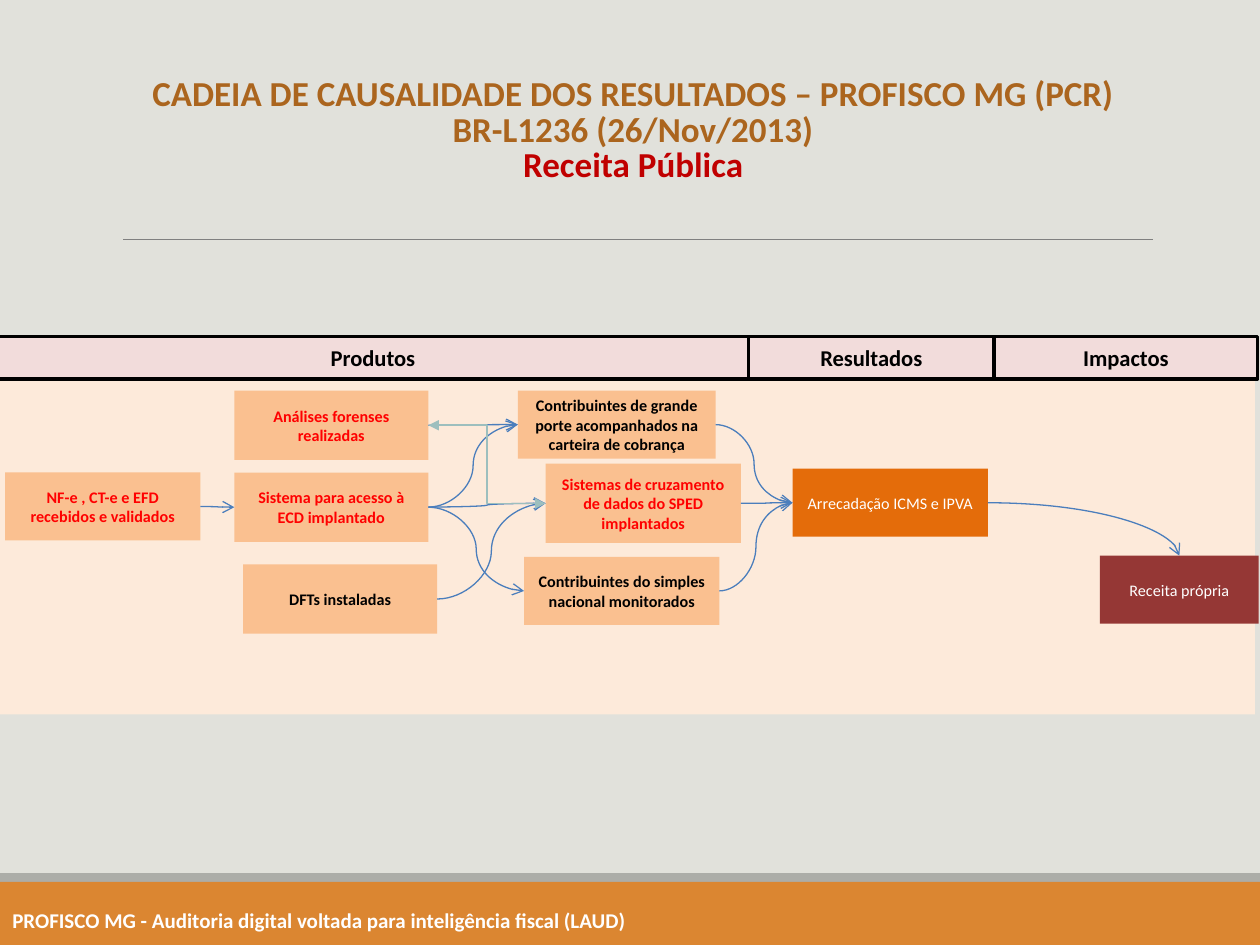
from pptx import Presentation
from pptx.dml.color import RGBColor
from pptx.enum.shapes import MSO_CONNECTOR as CONNECTOR, MSO_SHAPE as SHAPE
from pptx.enum.text import MSO_ANCHOR as ANCHOR, PP_ALIGN as ALIGN
from pptx.oxml.ns import qn
from pptx.util import Inches, Pt
from lxml.etree import SubElement

TITLE = [
    ("CADEIA DE CAUSALIDADE DOS RESULTADOS – PROFISCO MG (PCR) BR-L1236 (26/Nov/2013)", "AB651E"),
    ("Receita Pública", "C00000"),
]
FOOTER = "PROFISCO MG - Auditoria digital voltada para inteligência fiscal (LAUD)"

BANDS = [
    (0, 6.93, 10, 0.07, "ACADA8"),
    (0, 7, 10, 0.5, "DB8631"),
    (-0.03, 2.94, 9.99, 2.73, "FDEADA"),
]

HEADER_TOP, HEADER_HEIGHT = 2.67, 0.34
HEADER_LEFT = -0.02
HEADERS = [("Produtos", 5.96), ("Resultados", 1.95), ("Impactos", 2.09)]

PRODUCT, RESULT, IMPACT = "FAC090", "E46C0A", "953735"
RED, BLACK, WHITE = "FF0000", "000000", "FFFFFF"
BOXES = {
    "nfe": ("NF-e , CT-e e EFD recebidos e validados", 0.04, 3.75, 1.55, 0.54, PRODUCT, RED),
    "forenses": ("Análises forenses realizadas", 1.86, 3.1, 1.54, 0.55, PRODUCT, RED),
    "ecd": ("Sistema para acesso à ECD implantado", 1.86, 3.75, 1.54, 0.55, PRODUCT, RED),
    "dfts": ("DFTs instaladas", 1.93, 4.48, 1.54, 0.55, PRODUCT, BLACK),
    "grandes": ("Contribuintes de grande porte acompanhados na carteira de cobrança",
                4.11, 3.1, 1.57, 0.54, PRODUCT, BLACK),
    "sped": ("Sistemas de cruzamento de dados do SPED implantados",
             4.33, 3.68, 1.55, 0.63, PRODUCT, RED),
    "simples": ("Contribuintes do simples nacional monitorados",
                4.16, 4.42, 1.55, 0.54, PRODUCT, BLACK),
    "icms": ("Arrecadação ICMS e IPVA", 6.29, 3.72, 1.55, 0.54, RESULT, WHITE),
    "receita": ("Receita própria", 8.73, 4.41, 1.26, 0.54, IMPACT, WHITE),
}

FLOWS = [
    ("sped", "icms"), ("simples", "icms"), ("grandes", "icms"), ("nfe", "ecd"),
    ("ecd", "sped"), ("ecd", "grandes"), ("ecd", "simples"),
    ("forenses", "grandes"), ("dfts", "sped"),
]
TOP, LEFT, RIGHT = 0, 1, 3


def color(value):
    return RGBColor.from_string(value)


def write(paragraph, text, size=9.2, fill=BLACK, bold=True, align=ALIGN.CENTER):
    paragraph.alignment = align
    run = paragraph.add_run()
    run.text = text
    font = run.font
    font.name, font.size, font.bold = "Calibri", Pt(size), bold
    font.color.rgb = color(fill)


def add_box(left, top, width, height, fill, border=None):
    shape = slide.shapes.add_shape(
        SHAPE.RECTANGLE, Inches(left), Inches(top), Inches(width), Inches(height))
    shape.shadow.inherit = False
    shape.fill.solid()
    shape.fill.fore_color.rgb = color(fill)
    if border:
        shape.line.color.rgb = color(border)
        shape.line.width = Pt(2)
    else:
        shape.line.fill.background()
    shape.text_frame.word_wrap = True
    shape.text_frame.vertical_anchor = ANCHOR.MIDDLE
    return shape


def add_line(kind, stroke, width, points=(0, 0, 0, 0), head=None, tail=None):
    connector = slide.shapes.add_connector(kind, *map(Inches, points))
    connector.line.color.rgb = color(stroke)
    connector.line.width = Pt(width)
    line = connector.line._get_or_add_ln()
    for tag, arrow in (("a:headEnd", head), ("a:tailEnd", tail)):
        if arrow:
            SubElement(line, qn(tag), type=arrow)
    SubElement(connector._element.spPr, qn("a:effectLst"))
    return connector


def link(connector, source, target, target_side=LEFT):
    connector.begin_connect(boxes[source], RIGHT)
    connector.end_connect(boxes[target], target_side)


presentation = Presentation()
presentation.slide_width, presentation.slide_height = Inches(10), Inches(7.5)
slide = presentation.slides.add_slide(presentation.slide_layouts[5])
slide.background.fill.solid()
slide.background.fill.fore_color.rgb = color("E1E1DB")

title = slide.shapes.title
title.left, title.top, title.width, title.height = map(Inches, (0.9, 0.31, 8.25, 1.21))
title.text_frame.vertical_anchor = ANCHOR.BOTTOM
title.text_frame.word_wrap = True
heading = title.text_frame.paragraphs[0]
heading.line_spacing = 0.85
for index, (text, fill) in enumerate(TITLE):
    if index:
        heading.add_line_break()
    write(heading, text, size=20, fill=fill)

for band in BANDS:
    add_box(*band)
add_line(CONNECTOR.STRAIGHT, "808080", 0.5, (0.98, 1.9, 9.15, 1.9))

footer = slide.shapes.add_textbox(Inches(0), Inches(7.15), Inches(5.14), Inches(0.3))
footer.text_frame.word_wrap = False
write(footer.text_frame.paragraphs[0], FOOTER, size=12, fill=WHITE, align=ALIGN.LEFT)

left = HEADER_LEFT
for text, width in HEADERS:
    header = add_box(left, HEADER_TOP, width, HEADER_HEIGHT, "F2DCDB", border=BLACK)
    write(header.text_frame.paragraphs[0], text, size=12.9)
    left += width

boxes = {}
for name, (text, *place, fill, text_fill) in BOXES.items():
    boxes[name] = add_box(*place, fill)
    write(boxes[name].text_frame.paragraphs[0], text, fill=text_fill, bold=text_fill != WHITE)

for source, target in FLOWS:
    link(add_line(CONNECTOR.CURVE, "4B7EBC", 0.75, tail="arrow"), source, target)

impact_arrow = add_line(CONNECTOR.CURVE, "4B7EBC", 0.75, tail="arrow")
impact_arrow._element.spPr.find(qn("a:prstGeom")).set("prst", "curvedConnector2")
link(impact_arrow, "icms", "receita", TOP)

exchange = add_line(CONNECTOR.ELBOW, "9DBFBE", 1, head="triangle", tail="triangle")
link(exchange, "forenses", "sped")

presentation.save("out.pptx")
